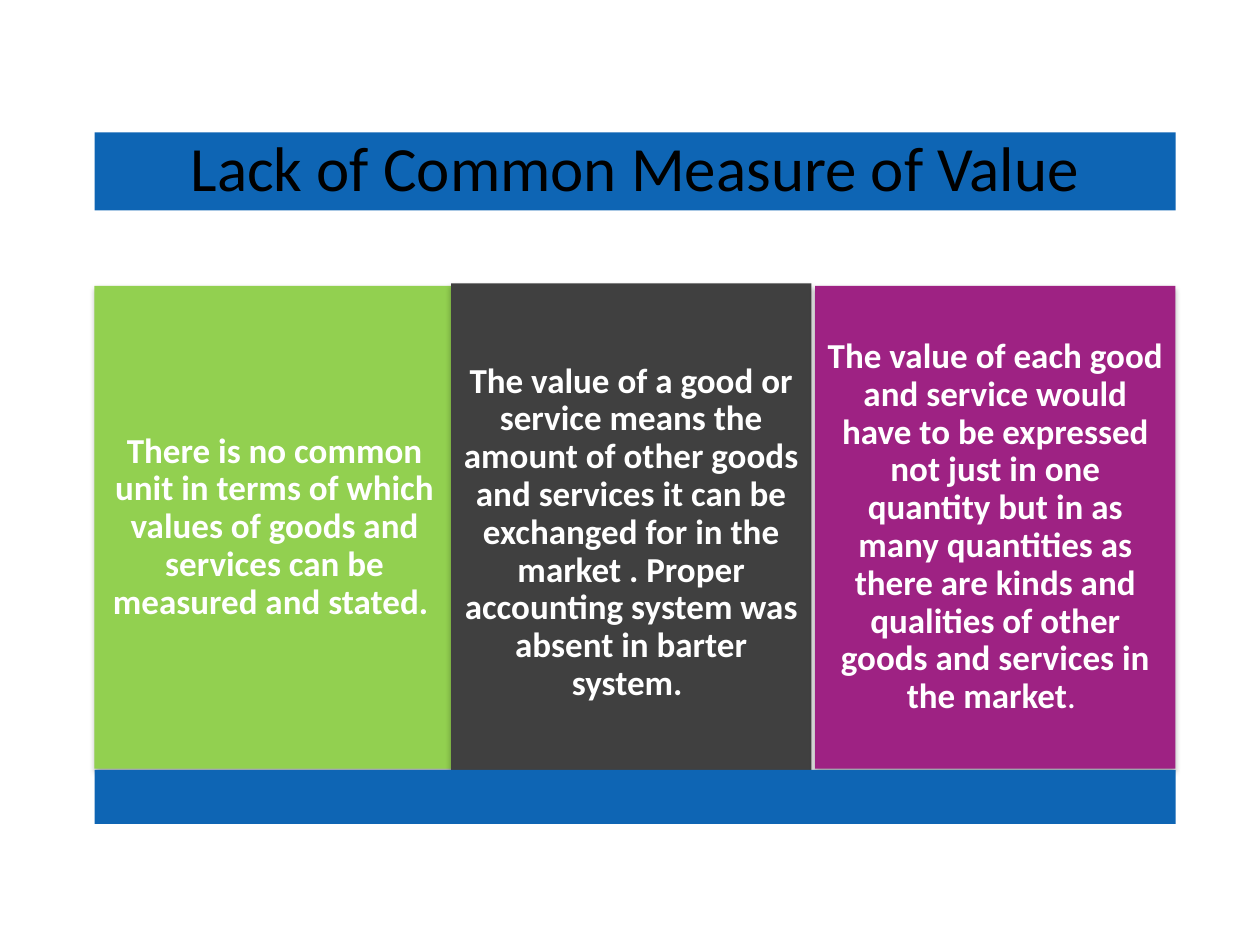
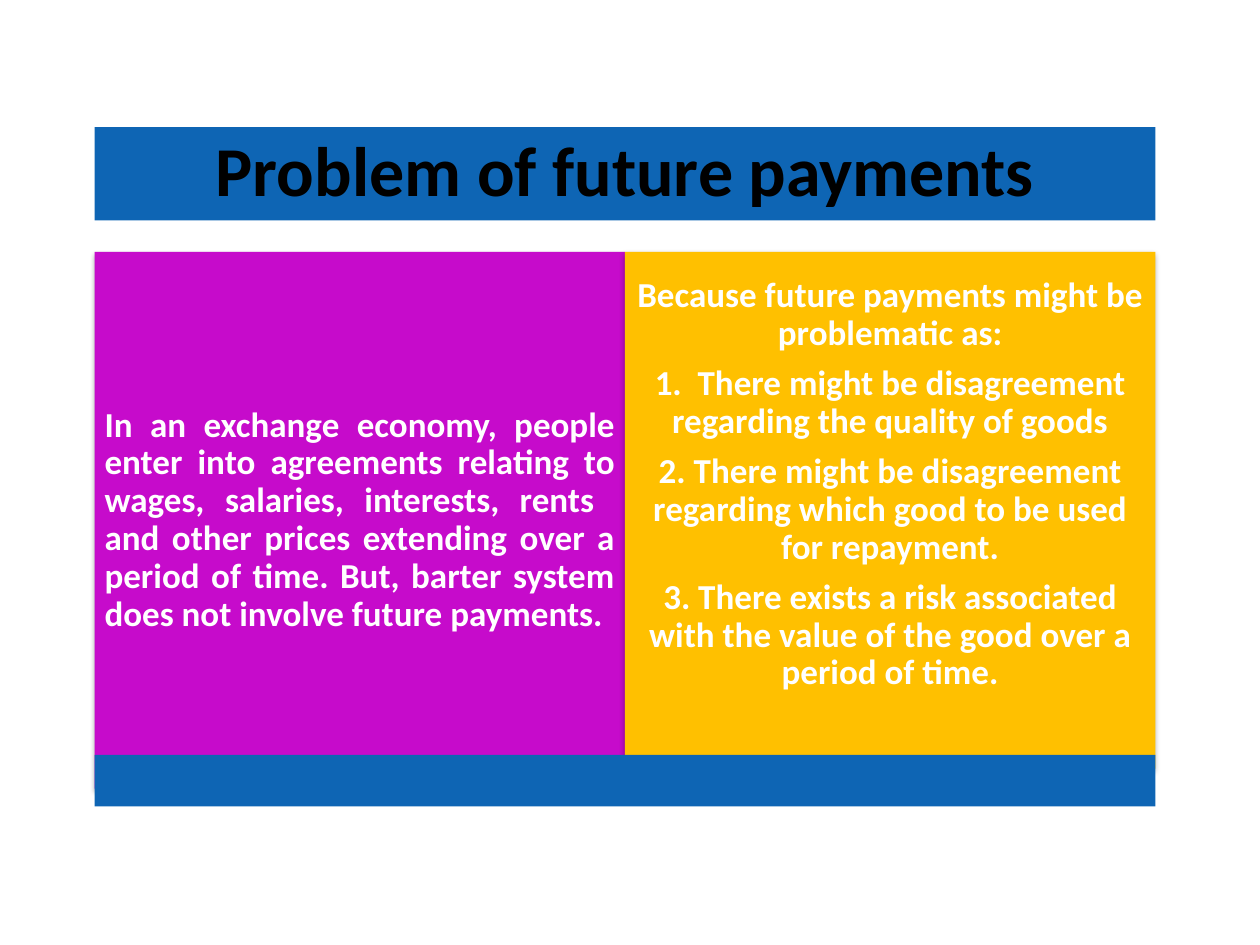
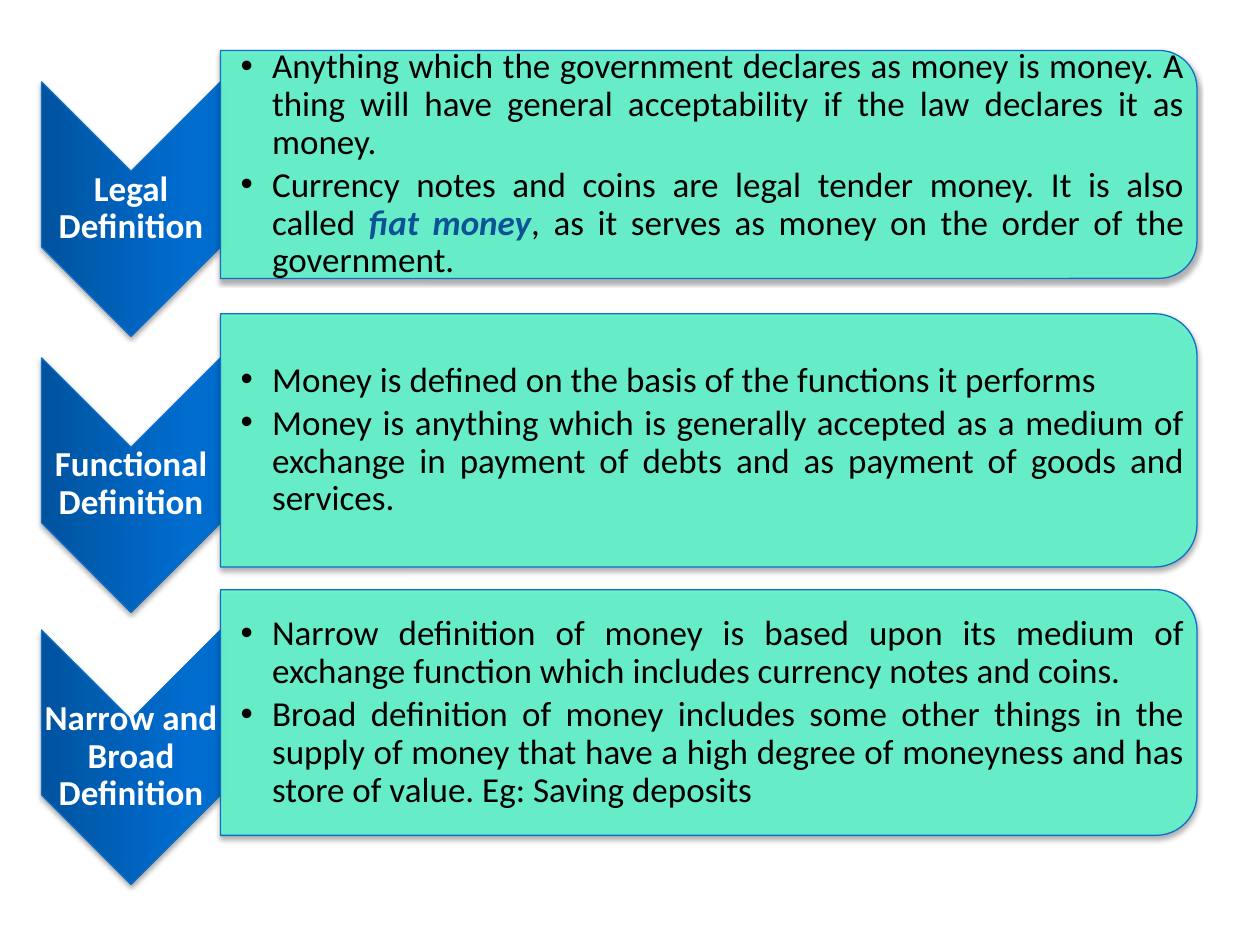
from lxml import etree
from pptx import Presentation
from pptx.dml.color import RGBColor
from pptx.enum.shapes import MSO_SHAPE
from pptx.enum.text import MSO_ANCHOR, MSO_AUTO_SIZE, PP_ALIGN
from pptx.oxml import parse_xml
from pptx.oxml.ns import nsdecls, qn
from pptx.util import Inches, Pt

RECT = MSO_SHAPE.RECTANGLE
CHEVRON = MSO_SHAPE.CHEVRON
ROUND = MSO_SHAPE.ROUND_2_SAME_RECTANGLE
CENTER = PP_ALIGN.CENTER
JUSTIFY = PP_ALIGN.JUSTIFY
MIDDLE = MSO_ANCHOR.MIDDLE
NO_FIT = MSO_AUTO_SIZE.NONE

FONT = "Calibri"
BLACK = RGBColor(0x00, 0x00, 0x00)
WHITE = RGBColor(0xFF, 0xFF, 0xFF)
BAND = RGBColor(0x0E, 0x65, 0xB4)
GREEN = RGBColor(0x92, 0xD0, 0x50)
GRAY = RGBColor(0x40, 0x40, 0x40)
PLUM = RGBColor(0x9E, 0x22, 0x83)
PINK = RGBColor(0xC6, 0x0B, 0xCB)
GOLD = RGBColor(0xFF, 0xC0, 0x00)
MINT = RGBColor(0x5F, 0xF3, 0xCA)
EDGE = RGBColor(0x0F, 0x6F, 0xC6)
TERM = RGBColor(0x0B, 0x53, 0x94)
SHADES = ((0, RGBColor(0x00, 0x53, 0x9F)), (80, RGBColor(0x00, 0x6C, 0xCE)),
          (100, RGBColor(0x00, 0x6D, 0xCF)))

LEFT = 0.75

VALUE = (
    (0.75, 2.27, 3.83, GREEN,
     [("There is no common unit in terms of which values of goods and "
       "services can be measured and stated. ", True)]),
    (3.58, 2.25, 3.96, GRAY,
     [("The value of a good or service means the amount of other goods and "
       "services it can be exchanged for in the market . Proper accounting "
       "system was absent in barter system. ", True)]),
    (6.47, 2.27, 3.83, PLUM,
     [("The value of each good and service would have to be expressed not "
       "just in one quantity but in as many quantities as there are kinds "
       "and qualities of other goods and services in the market", True),
      (". ", False)]),
)

FUTURE = ("In an exchange economy, people enter into agreements relating to "
          "wages, salaries, interests, rents  and other prices extending over "
          "a period of time. But, barter system does not involve future "
          "payments. ")

RISKS = (
    "Because future payments might be problematic as:",
    "1.  There might be disagreement regarding the quality of goods",
    "2. There might be disagreement regarding which good to be used for "
    "repayment.",
    "3. There exists a risk associated with the value of the good over a "
    "period of time.",
)

KINDS = (
    ("Legal Definition", 0.65, 0.4, 1.81, (
        ["Anything which the government declares as money is money. A thing "
         "will have general acceptability if the law declares it as money. "],
        ["Currency notes and coins are legal tender money. It is also called ",
         "fiat money",
         ", as it serves as money on the order of the government. "])),
    ("Functional Definition", 2.84, 2.49, 2.01, (
        ["Money is defined on the basis of the functions it performs"],
        ["Money is anything which is generally accepted as a medium of "
         "exchange in payment of debts and as payment of goods and "
         "services. "])),
    ("Narrow and Broad Definition", 5.0, 4.68, 1.95, (
        ["Narrow definition of money is based upon its medium of exchange "
         "function which includes currency notes and coins."],
        ["Broad definition of money includes some other things in the supply "
         "of money that have a high degree of moneyness and has store of "
         "value. Eg: Saving deposits"])),
)


def frame(shape, left, right, top, low):
    """Prepare the text frame of a shape with its insets."""
    text = shape.text_frame
    text.word_wrap = True
    text.auto_size = NO_FIT
    text.vertical_anchor = MIDDLE
    text.margin_left, text.margin_right = Inches(left), Inches(right)
    text.margin_top, text.margin_bottom = Inches(top), Inches(low)
    return text


def para(text, first, align, after):
    """Return the first or a new paragraph, spaced and aligned."""
    line = text.paragraphs[0] if first else text.add_paragraph()
    line.alignment = align
    line.line_spacing = 0.9
    line.space_after = Pt(after)
    return line


def write(line, words, color, size=20, bold=False, slant=False):
    """Add one run."""
    run = line.add_run()
    run.text = words
    font = run.font
    font.name, font.size = FONT, Pt(size)
    font.bold, font.italic = bold, slant
    font.color.rgb = color


def shade(shape):
    """Give a shape the soft shadow below it."""
    shape.shadow.inherit = False
    glow = shape._element.spPr.find(qn("a:effectLst"))
    glow.append(parse_xml(
        f'<a:outerShdw {nsdecls("a")} blurRad="{Pt(3.1)}" dist="{Pt(1.8)}" '
        'dir="5400000" rotWithShape="0"><a:srgbClr val="000000">'
        '<a:alpha val="35000"/></a:srgbClr></a:outerShdw>'))


def block(slide, left, top, wide, high, color):
    """Add a plain filled rectangle."""
    shape = slide.shapes.add_shape(
        RECT, Inches(left), Inches(top), Inches(wide), Inches(high))
    shape.shadow.inherit = False
    shape.fill.solid()
    shape.fill.fore_color.rgb = color
    shape.line.fill.background()
    return shape


def panel(slide, left, top, wide, high, color, paras, align=CENTER, low=0.08):
    """Add a shadowed panel with bold white paragraphs."""
    shape = block(slide, left, top, wide, high, color)
    shade(shape)
    text = frame(shape, 0.08, 0.08, 0.08, low)
    for i, runs in enumerate(paras):
        line = para(text, i == 0, align, 7)
        for words, bold in runs:
            write(line, words, WHITE, bold=bold)


def head(deck, words, top, wide, high, size, bold):
    """Add a slide whose title is a blue band."""
    slide = deck.slides.add_slide(deck.slide_layouts[5])
    title = slide.shapes.title
    title.left, title.top = Inches(LEFT), Inches(top)
    title.width, title.height = Inches(wide), Inches(high)
    title.fill.solid()
    title.fill.fore_color.rgb = BAND
    text = frame(title, 0.15, 0.15, 0, 0)
    write(para(text, True, CENTER, 0), words, BLACK, size, bold)
    return slide


def turn(slide, kind, left, top, wide, high):
    """Add a quarter-turned shape that covers the given area."""
    shift = (wide - high) / 2
    shape = slide.shapes.add_shape(
        kind, Inches(left + shift), Inches(top - shift),
        Inches(high), Inches(wide))
    shape.rotation = 90
    shape.line.color.rgb = EDGE
    shape.line.width = Pt(0.75)
    shade(shape)
    return shape


def blend(shape):
    """Fill a shape with the blue gradient."""
    stops = "".join(
        f'<a:gs pos="{pos * 1000}"><a:srgbClr val="{color}"/></a:gs>'
        for pos, color in SHADES)
    shape.fill.solid()
    props = shape._element.spPr
    props.replace(props.find(qn("a:solidFill")), parse_xml(
        f'<a:gradFill {nsdecls("a")} rotWithShape="1"><a:gsLst>{stops}'
        '</a:gsLst><a:lin ang="16200000" scaled="0"/></a:gradFill>'))


def tint(shape, color, alpha):
    """Fill a shape with a slightly clear colour."""
    shape.fill.solid()
    shape.fill.fore_color.rgb = color
    tone = shape._element.spPr.find(qn("a:solidFill"))[0]
    etree.SubElement(tone, qn("a:alpha")).set("val", str(alpha * 1000))


def label(slide, left, top, wide, high, inset):
    """Add a text box and return its frame."""
    box = slide.shapes.add_textbox(
        Inches(left), Inches(top), Inches(wide), Inches(high))
    return frame(box, inset, 0.01, 0.01, 0.01)


def bullet(line):
    """Give a paragraph a hanging bullet."""
    props = line._p.get_or_add_pPr()
    props.set("marL", str(Inches(0.25)))
    props.set("indent", str(Inches(-0.25)))
    etree.SubElement(props, qn("a:buFont")).set("typeface", "Arial")
    etree.SubElement(props, qn("a:buChar")).set("char", "•")


def define(slide, name, tip, top, high, points):
    """Add a chevron and the box of points beside it."""
    blend(turn(slide, CHEVRON, 0.33, tip, 1.42, 2.02))
    text = label(slide, 0.33, tip + 0.7, 1.42, 0.61, 0.01)
    write(para(text, True, CENTER, 7), name, WHITE, bold=True)
    tint(turn(slide, ROUND, 1.75, top, 7.75, high), MINT, 90)
    text = label(slide, 1.75, top + 0.09, 7.66, high - 0.18, 0.16)
    for i, runs in enumerate(points):
        line = para(text, i == 0, JUSTIFY, 3)
        bullet(line)
        for j, words in enumerate(runs):
            term = j == 1
            write(line, words, TERM if term else BLACK, bold=term, slant=term)


def main():
    """Build the three slides."""
    deck = Presentation()
    deck.slide_width, deck.slide_height = Inches(10), Inches(7.5)

    slide = head(deck, "Lack of Common Measure of Value",
                 1.05, 8.58, 0.62, 36, False)
    for left, top, high, color, runs in VALUE:
        panel(slide, left, top, 2.86, high, color, [runs])
    block(slide, LEFT, 6.11, 8.58, 0.43, BAND)

    slide = head(deck, "Problem of future payments",
                 1.01, 8.42, 0.74, 40, True)
    half = 4.21
    panel(slide, LEFT, 2, half, 4.26, PINK, [[(FUTURE, True)]], JUSTIFY)
    panel(slide, LEFT + half, 2, half, 4.1, GOLD,
          [[(words, True)] for words in RISKS], low=0.48)
    block(slide, LEFT, 5.99, 2 * half, 0.41, BAND)

    slide = deck.slides.add_slide(deck.slide_layouts[6])
    for kind in KINDS:
        define(slide, *kind)

    deck.save("out.pptx")


if __name__ == "__main__":
    main()
